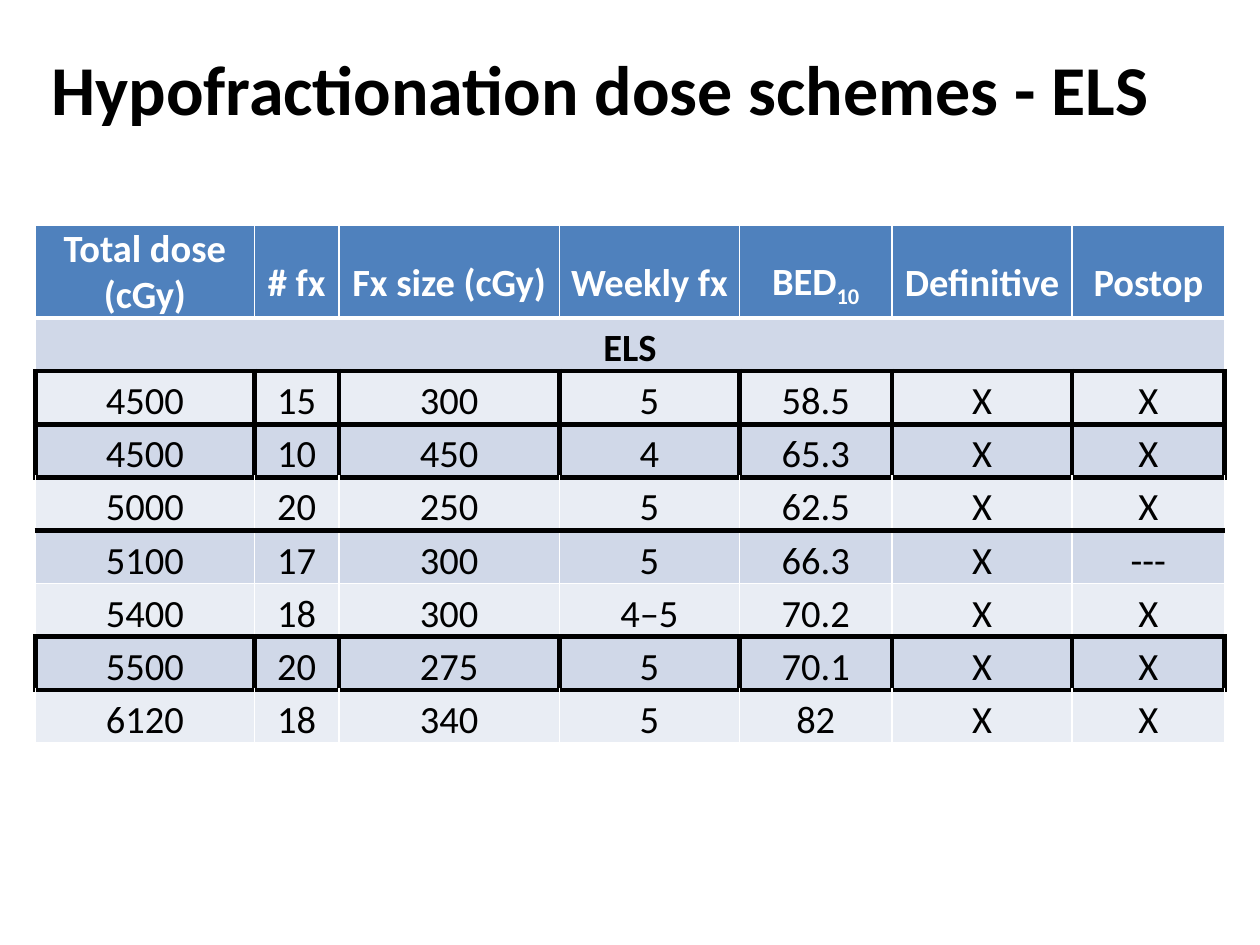
from dataclasses import dataclass

from lxml.etree import SubElement
from pptx import Presentation
from pptx.dml.color import RGBColor
from pptx.enum.text import MSO_ANCHOR, PP_ALIGN
from pptx.oxml.ns import qn
from pptx.table import _Cell
from pptx.text.text import TextFrame
from pptx.util import Inches, Length, Pt

COLORS = {
    "black": "000000",
    "white": "FFFFFF",
    "header": "4F81BD",
    "dark band": "D0D8E8",
    "light band": "E9EDF4",
}
FONT = "Calibri"
SLIDE_WIDTH, SLIDE_HEIGHT = Inches(10), Inches(7.5)
COLUMN_SHARES = (17.4, 6.7, 17.5, 14.3, 12.1, 14.3, 12.1)
CELL_MARGIN = Inches(0.05)


@dataclass(frozen=True)
class Edge:
    color: str
    points: int


THIN_WHITE = Edge("white", 1)
THICK_WHITE = Edge("white", 3)
THICK_BLACK = Edge("black", 3)


@dataclass(frozen=True)
class TableRow:
    texts: tuple[str, ...]
    fill: str = "light band"
    height: float = 4.67
    top: Edge = THIN_WHITE
    sides: Edge = THIN_WHITE
    color: str = "black"
    bold: bool = False


def scheme(*texts: str, dark: bool = False, boxed: bool = False,
           top: Edge = THICK_BLACK) -> TableRow:
    """Describe one dose scheme; a boxed scheme has black sides."""
    return TableRow(texts, fill="dark band" if dark else "light band",
                    top=top, sides=THICK_BLACK if boxed else THIN_WHITE)


ROWS = (
    TableRow(("Total dose (cGy)", "# fx", "Fx size (cGy)", "Weekly fx", "BED_10",
              "Definitive", "Postop"),
             fill="header", height=9.2, color="white", bold=True),
    TableRow(("ELS",), fill="dark band", height=5.6, top=THICK_WHITE, bold=True),
    scheme("4500", "15", "300", "5", "58.5", "X", "X", boxed=True),
    scheme("4500", "10", "450", "4", "65.3", "X", "X", dark=True, boxed=True),
    scheme("5000", "20", "250", "5", "62.5", "X", "X"),
    scheme("5100", "17", "300", "5", "66.3", "X", "---", dark=True),
    scheme("5400", "18", "300", "4–5", "70.2", "X", "X", top=THIN_WHITE),
    scheme("5500", "20", "275", "5", "70.1", "X", "X", dark=True, boxed=True),
    scheme("6120", "18", "340", "5", "82", "X", "X"),
)


def across(share: float) -> Length:
    """Turn a percentage of the slide's width into a length."""
    return Length(round(SLIDE_WIDTH * share / 100))


def down(share: float) -> Length:
    """Turn a percentage of the slide's height into a length."""
    return Length(round(SLIDE_HEIGHT * share / 100))


def write_text(frame: TextFrame, text: str, *, size: float, color: str, bold: bool,
               align: PP_ALIGN = PP_ALIGN.LEFT, line_spacing: float = 1.0) -> None:
    """Write one paragraph; what follows an underscore becomes a subscript."""
    paragraph = frame.paragraphs[0]
    paragraph.alignment = align
    paragraph.line_spacing = line_spacing
    for index, part in enumerate(text.split("_")):
        run = paragraph.add_run()
        run.text = part
        run.font.name = FONT
        run.font.size = Pt(size)
        run.font.bold = bold
        run.font.color.rgb = RGBColor.from_string(COLORS[color])
        if index:
            run._r.get_or_add_rPr().set("baseline", "-25000")


def format_cell(cell: _Cell, row: TableRow, bottom: Edge) -> None:
    cell.margin_left = cell.margin_right = CELL_MARGIN
    cell.margin_top = cell.margin_bottom = 0
    cell.vertical_anchor = MSO_ANCHOR.MIDDLE
    properties = cell._tc.get_or_add_tcPr()
    borders = {"a:lnL": row.sides, "a:lnR": row.sides, "a:lnT": row.top, "a:lnB": bottom}
    for tag, edge in borders.items():
        line = SubElement(properties, qn(tag), w=str(Pt(edge.points)))
        fill = SubElement(line, qn("a:solidFill"))
        SubElement(fill, qn("a:srgbClr"), val=COLORS[edge.color])
    cell.fill.solid()
    cell.fill.fore_color.rgb = RGBColor.from_string(COLORS[row.fill])


def add_title(slide) -> None:
    box = slide.shapes.add_textbox(across(3.1), down(4.13), across(90.5), down(14.53))
    box.text_frame.word_wrap = True
    write_text(box.text_frame, "Hypofractionation dose schemes - ELS",
               size=40, color="black", bold=True)


def add_dose_table(slide) -> None:
    heights = [row.height for row in ROWS]
    table = slide.shapes.add_table(
        len(ROWS), len(COLUMN_SHARES), across(2.8), down(23.87),
        across(sum(COLUMN_SHARES)), down(sum(heights))).table
    table.first_row = table.horz_banding = False
    for column, share in zip(table.columns, COLUMN_SHARES):
        column.width = across(share)

    bottoms = [row.top for row in ROWS[1:]] + [THIN_WHITE]
    for row_index, (row, bottom) in enumerate(zip(ROWS, bottoms)):
        table.rows[row_index].height = down(row.height)
        cells = list(table.rows[row_index].cells)
        for cell in cells:
            format_cell(cell, row, bottom)
        if len(row.texts) == 1:
            cells[0].merge(cells[-1])
        for column_index, text in enumerate(row.texts):
            if row_index:
                spacing = 1.15
            else:
                spacing = 1.5 if column_index else 1.0
            write_text(cells[column_index].text_frame, text, size=22, color=row.color,
                       bold=row.bold, align=PP_ALIGN.CENTER, line_spacing=spacing)


def main() -> None:
    presentation = Presentation()
    presentation.slide_width, presentation.slide_height = SLIDE_WIDTH, SLIDE_HEIGHT
    slide = presentation.slides.add_slide(presentation.slide_layouts[6])
    add_title(slide)
    add_dose_table(slide)
    presentation.save("out.pptx")


if __name__ == "__main__":
    main()
